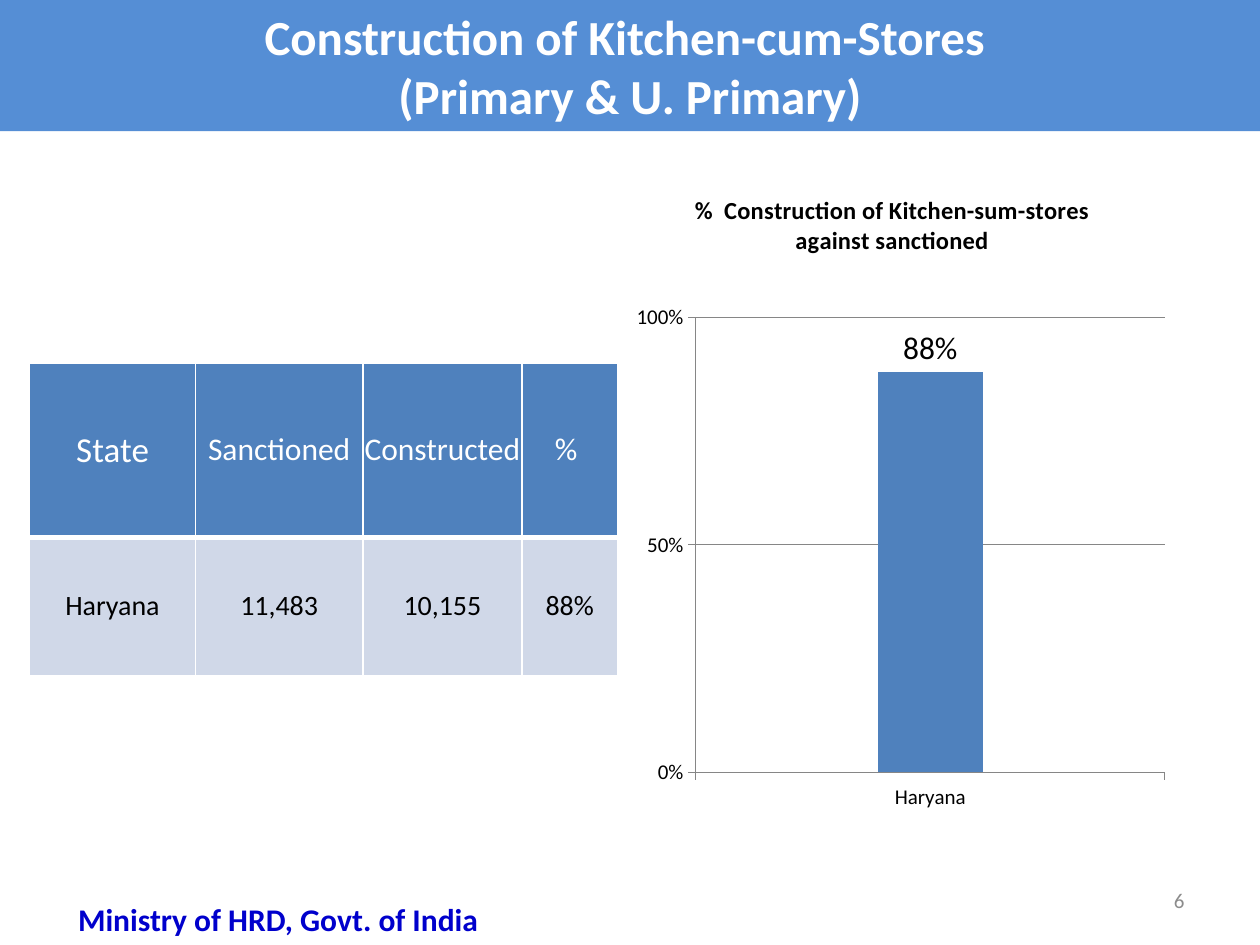
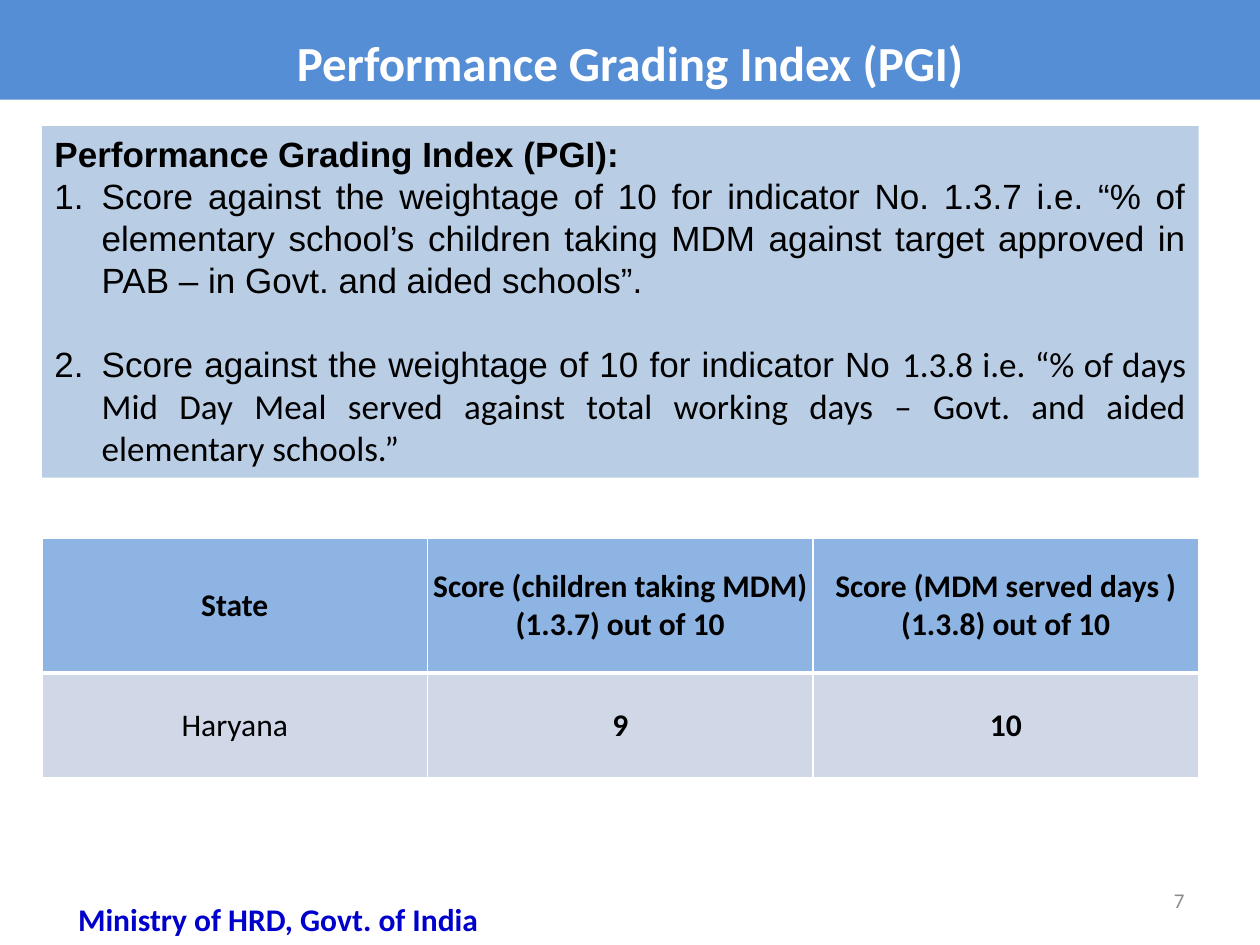
from lxml.etree import SubElement
from pptx import Presentation
from pptx.chart.data import CategoryChartData
from pptx.dml.color import RGBColor
from pptx.enum.chart import XL_CHART_TYPE, XL_LABEL_POSITION, XL_TICK_MARK
from pptx.enum.shapes import MSO_SHAPE
from pptx.enum.text import MSO_ANCHOR, PP_ALIGN
from pptx.oxml import parse_xml
from pptx.oxml.ns import nsdecls, qn
from pptx.util import Pt

COLORS = {
    "band": "558ED5", "header": "4F81BD", "light_header": "8EB4E3",
    "body": "D0D8E8", "panel": "B9CDE5", "axis": "868686",
    "footer": "0000CC", "number": "8C8C8C", "white": "FFFFFF", "black": "000000",
}
TITLE = {"size": Pt(28), "bold": True, "color": "white"}
FOOTER = {"size": Pt(18), "bold": True, "color": "footer"}
NUMBER = {"size": Pt(12), "color": "number"}


def rgb(name):
    return RGBColor.from_string(COLORS[name])


def style(font, fmt):
    for key, value in ({"name": "Calibri", "color": "black"} | fmt).items():
        if key == "color":
            font.color.rgb = rgb(value)
        else:
            setattr(font, key, value)


def add_run(p, text, fmt):
    r = p.add_run()
    r.text = text
    style(r.font, fmt)


def write(tf, lines, fmt, align=PP_ALIGN.CENTER):
    for i, line in enumerate(lines):
        p = tf.add_paragraph() if i else tf.paragraphs[0]
        p.alignment = align
        add_run(p, line, fmt)


def add_box(s, box, fill):
    sp = s.shapes.add_shape(MSO_SHAPE.RECTANGLE, *map(Pt, box))
    sp.shadow.inherit = False
    sp.fill.solid()
    sp.fill.fore_color.rgb = rgb(fill)
    sp.line.fill.background()
    sp.text_frame.word_wrap = True
    return sp.text_frame


def add_label(s, box, text, fmt, align, anchor):
    tf = s.shapes.add_textbox(*map(Pt, box)).text_frame
    tf.word_wrap = True
    tf.vertical_anchor = anchor
    write(tf, [text], fmt, align)


# Title band, page number and footer shared by every slide
def add_frame(prs, lines, band_height, number, spacing=1.0):
    s = prs.slides.add_slide(prs.slide_layouts[6])
    tf = add_box(s, (0, 0, 720, band_height), "band")
    tf.vertical_anchor = MSO_ANCHOR.MIDDLE
    write(tf, lines, TITLE)
    for p in tf.paragraphs:
        p.line_spacing = spacing
    add_label(s, (516, 500, 168, 29), str(number), NUMBER, PP_ALIGN.RIGHT, MSO_ANCHOR.MIDDLE)
    add_label(s, (18, 511, 282, 29), "Ministry of HRD, Govt. of India", FOOTER,
              PP_ALIGN.CENTER, MSO_ANCHOR.TOP)
    return s


def set_borders(cell, bottom):
    tcPr = cell._tc.get_or_add_tcPr()
    for i, (side, width) in enumerate(zip("LRTB", (1, 1, 1, bottom))):
        ln = parse_xml(f'<a:ln{side} {nsdecls("a")} w="{Pt(width)}"><a:solidFill>'
                       f'<a:srgbClr val="{COLORS["white"]}"/></a:solidFill></a:ln{side}>')
        tcPr.insert(i, ln)


# Table: each cell is (text, format), one header row and one body row
def add_table(s, box, widths, heights, rows, header_fill):
    table = s.shapes.add_table(len(rows), len(widths), *map(Pt, box)).table
    for col, width in zip(table.columns, widths):
        col.width = Pt(width)
    for i, (row, height, cells) in enumerate(zip(table.rows, heights, rows)):
        row.height = Pt(height)
        for cell, (text, fmt) in zip(row.cells, cells):
            for side in ("left", "top", "right", "bottom"):
                setattr(cell, f"margin_{side}", 0)
            cell.vertical_anchor = MSO_ANCHOR.MIDDLE
            cell.fill.solid()
            cell.fill.fore_color.rgb = rgb("body" if i else header_fill)
            set_borders(cell, 1 if i else 3)
            write(cell.text_frame, text.split("\n"), fmt)


# Column chart with a fixed inner plot area
def add_column_chart(s, box):
    data = CategoryChartData(number_format="0%")
    data.categories = ["Haryana"]
    data.add_series("Series 1", [0.88])
    chart = s.shapes.add_chart(XL_CHART_TYPE.COLUMN_CLUSTERED, *map(Pt, box), data).chart
    chart.has_legend = False
    style(chart.font, {"size": Pt(18)})
    chart.has_title = True
    write(chart.chart_title.text_frame,
          ["%  Construction of Kitchen-sum-stores against sanctioned"],
          {"size": Pt(14), "bold": True})

    # Axes
    values = chart.value_axis
    for key, value in {"minimum_scale": 0, "maximum_scale": 1, "major_unit": 0.5,
                       "has_major_gridlines": True}.items():
        setattr(values, key, value)
    values.tick_labels.number_format = "0%"
    values.tick_labels.number_format_is_linked = False
    values.major_gridlines.format.line.color.rgb = rgb("axis")
    for axis in (values, chart.category_axis):
        axis.major_tick_mark = XL_TICK_MARK.OUTSIDE
        axis.minor_tick_mark = XL_TICK_MARK.NONE
        axis.format.line.color.rgb = rgb("axis")
        style(axis.tick_labels.font, {"size": Pt(12)})

    # Column and its label
    plot = chart.plots[0]
    plot.gap_width = 349
    plot.vary_by_categories = False
    fill = plot.series[0].format.fill
    fill.solid()
    fill.fore_color.rgb = rgb("header")
    plot.has_data_labels = True
    labels = plot.data_labels
    for key, value in {"show_value": True, "number_format": "0%",
                       "number_format_is_linked": False,
                       "position": XL_LABEL_POSITION.OUTSIDE_END}.items():
        setattr(labels, key, value)
    style(labels.font, {"size": Pt(18)})

    # Plot area
    area = chart._chartSpace.find(f".//{qn('c:plotArea')}")
    for old in area.findall(qn("c:layout")):
        area.remove(old)
    layout = parse_xml(f'<c:layout {nsdecls("c")}><c:manualLayout/></c:layout>')
    area.insert(0, layout)
    for tag, value in (("layoutTarget", "inner"), ("xMode", "edge"), ("yMode", "edge"),
                       ("x", 0.14), ("y", 0.22), ("w", 0.86), ("h", 0.67)):
        SubElement(layout[0], qn(f"c:{tag}")).set("val", str(value))


# Panel with a heading and numbered indicators, each a list of (text, font)
def add_indicators(s, box, heading, items):
    tf = add_box(s, box, "panel")
    tf.vertical_anchor = MSO_ANCHOR.TOP
    write(tf, [heading], {"name": "Arial", "size": Pt(20), "bold": True}, PP_ALIGN.JUSTIFY)
    for i, runs in enumerate(items):
        p = tf.add_paragraph()
        p.alignment = PP_ALIGN.JUSTIFY
        p.space_before = Pt(24 * i)
        pPr = p._p.get_or_add_pPr()
        pPr.set("marL", str(Pt(27)))
        pPr.set("indent", str(-Pt(27)))
        SubElement(pPr, qn("a:buFont")).set("typeface", "Arial")
        SubElement(pPr, qn("a:buAutoNum")).set("type", "arabicPeriod")
        for text, font in runs:
            add_run(p, text, {"name": font, "size": Pt(20)})


def kitchen_slide(prs):
    s = add_frame(prs, ["Construction of Kitchen-cum-Stores ", "(Primary & U. Primary)"], 75, 6)
    state = {"size": Pt(20), "color": "white"}
    head = state | {"size": Pt(18)}
    body = {"size": Pt(16)}
    rows = [
        [("State", state), ("Sanctioned", head), ("Constructed", head), ("% ", head)],
        [(text, body) for text in ("Haryana", "11,483", "10,155", "88%")],
    ]
    add_table(s, (16.8, 207.5, 336, 178.5), (95, 95.5, 91, 54.5), (99.5, 79), rows, "header")
    add_column_chart(s, (354, 96, 312, 388))


def grading_slide(prs):
    s = add_frame(prs, ["Performance Grading Index (PGI)"], 57, 7, spacing=1.4)
    bold = {"size": Pt(18), "bold": True}
    rows = [
        [(text, bold) for text in ("State", "Score (children taking MDM)\n(1.3.7) out of 10",
                                   "Score (MDM served days )\n(1.3.8) out of 10")],
        [("Haryana", {"size": Pt(18), "bold": False}), ("9", bold), ("10", bold)],
    ]
    add_table(s, (24, 307.5, 661, 137), [661 / 3] * 3, (77, 60), rows, "light_header")
    add_indicators(s, (24, 72, 661, 201), "Performance Grading Index (PGI): ", [
        [("Score against the weightage of 10 for indicator No. 1.3.7 i.e. “% of elementary "
          "school’s children taking MDM against target approved in PAB – in Govt. and aided "
          "schools”.", "Arial")],
        [("Score against the weightage of 10 for indicator No ", "Arial"),
         ("1.3.8 i.e. “% of days Mid Day Meal served against total working days – Govt. and "
          "aided elementary schools.”", "Calibri")],
    ])


def main():
    prs = Presentation()
    prs.slide_width, prs.slide_height = Pt(720), Pt(540)
    kitchen_slide(prs)
    grading_slide(prs)
    prs.save("out.pptx")


if __name__ == "__main__":
    main()
